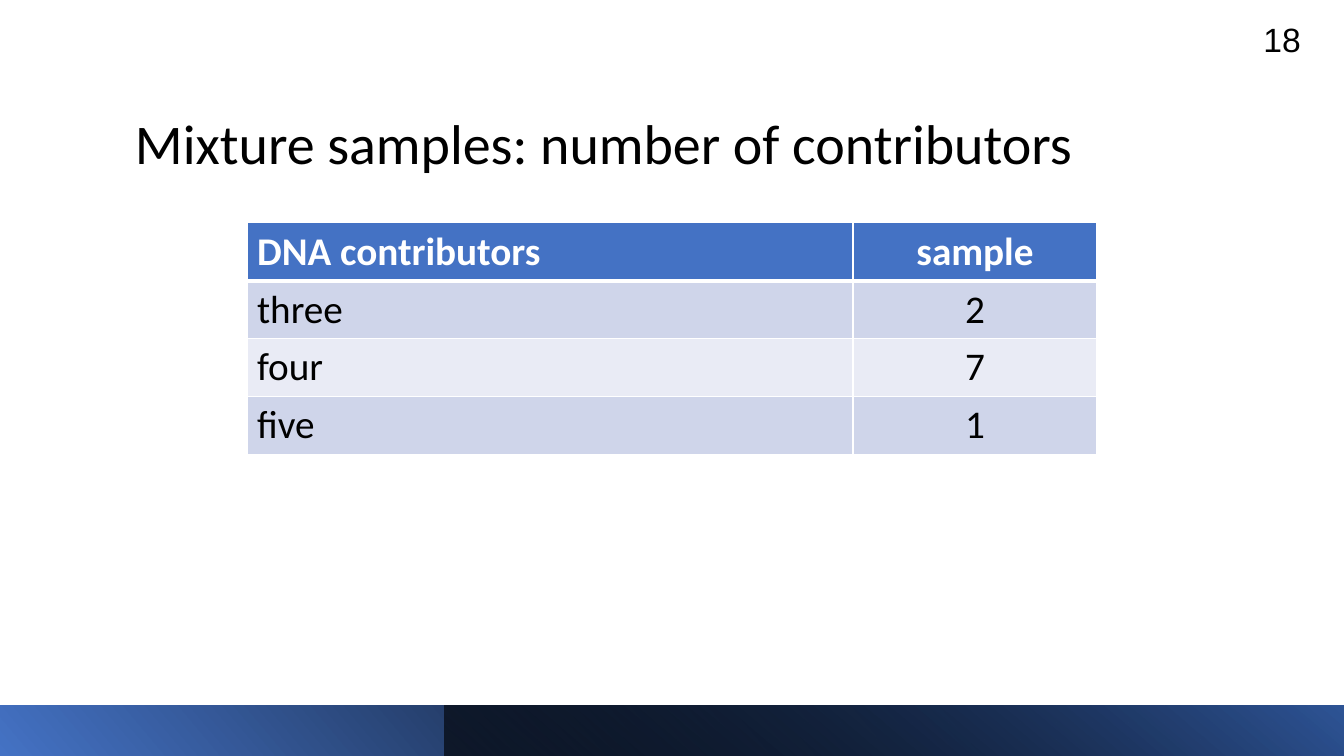
from lxml import etree
from pptx import Presentation
from pptx.dml.color import RGBColor
from pptx.enum import shapes, text
from pptx.oxml import ns
from pptx.util import Inches, Pt

BLACK = RGBColor(0x00, 0x00, 0x00)
WHITE = RGBColor(0xFF, 0xFF, 0xFF)
BLUE = RGBColor(0x44, 0x72, 0xC4)
DEEP_BLUE = RGBColor(0x2F, 0x55, 0x97)
BAND_DARK = RGBColor(0xCF, 0xD5, 0xEA)
BAND_LIGHT = RGBColor(0xE9, 0xEB, 0xF5)

ROWS = [("DNA contributors", "sample"), ("three", "2"), ("four", "7"), ("five", "1")]


def style_paragraph(p, size, color, font="Calibri", align=text.PP_ALIGN.LEFT, bold=False):
    """Format a paragraph and its runs."""
    p.alignment = align
    for r in p.runs:
        r.font.name = font
        r.font.size = Pt(size)
        r.font.bold = bold
        r.font.color.rgb = color


def add_label(s, box, words, size, **style):
    """Add a vertically centred line of text in the box and return its paragraph."""
    tf = s.shapes.add_textbox(*map(Inches, box)).text_frame
    tf.word_wrap = True
    tf.vertical_anchor = text.MSO_ANCHOR.MIDDLE
    p = tf.paragraphs[0]
    p.text = words
    style_paragraph(p, size, BLACK, **style)
    return p


def add_gradient_bar(s, box, stops, angle, rotation=0):
    """Add a mirrored bar with a gradient of (position, colour, opacity) stops."""
    sp = s.shapes.add_shape(shapes.MSO_SHAPE.RECTANGLE, *map(Inches, box))
    sp.shadow.inherit = False
    sp.line.fill.background()
    sp.rotation = rotation
    sp._element.spPr.xfrm.set("flipH", "1")
    sp.fill.gradient()
    sp.fill.gradient_angle = 360 - angle
    for stop, (position, color, opacity) in zip(sp.fill.gradient_stops, stops):
        stop.position = position
        stop.color.rgb = color
        if opacity < 1:
            rgb = stop._gs.find(ns.qn("a:srgbClr"))
            etree.SubElement(rgb, ns.qn("a:alpha"), val=str(round(opacity * 100000)))


def add_footer(s, box):
    """Add the two overlapping gradient bars of the footer."""
    left, top, width, height = box
    third = width / 3 - 0.03
    add_gradient_bar(s, box, [(0, BLUE, 1), (0.78, BLACK, 1)], 40, 180)
    add_gradient_bar(s, (left + third, top, width - third, height),
                     [(0, BLACK, 0.63), (1, DEEP_BLUE, 1)], 230)


def set_borders(cell, bottom):
    """Draw white cell borders, with the given width below."""
    tcPr = cell._tc.get_or_add_tcPr()
    widths = {"lnL": 1, "lnR": 1, "lnT": 1, "lnB": bottom}
    for i, (side, width) in enumerate(widths.items()):
        ln = etree.Element(ns.qn(f"a:{side}"), w=str(Pt(width)))
        fill = etree.SubElement(ln, ns.qn("a:solidFill"))
        etree.SubElement(fill, ns.qn("a:srgbClr"), val=str(WHITE))
        tcPr.insert(i, ln)


def add_contributors_table(s, box):
    """Add the table of sample counts by number of contributors."""
    table = s.shapes.add_table(len(ROWS), 2, *map(Inches, box)).table
    table.columns[0].width = Inches(6.01)
    table.columns[1].width = Inches(box[2] - 6.01)
    for i, row in enumerate(ROWS):
        header = i == 0
        for j, words in enumerate(row):
            cell = table.cell(i, j)
            cell.text = words
            cell.fill.solid()
            cell.fill.fore_color.rgb = BLUE if header else BAND_DARK if i % 2 else BAND_LIGHT
            set_borders(cell, 3 if header else 1)
            style_paragraph(cell.text_frame.paragraphs[0], 28, WHITE if header else BLACK,
                            align=text.PP_ALIGN.CENTER if j else text.PP_ALIGN.LEFT,
                            bold=header)


def main():
    """Build the slide and save it."""
    prs = Presentation()
    prs.slide_width, prs.slide_height = Inches(13.33), Inches(7.5)
    s = prs.slides.add_slide(prs.slide_layouts[6])
    title = add_label(s, (1.24, 0.55, 10.6, 1.8), "Mixture samples: number of contributors", 40)
    title.line_spacing = 0.9
    add_footer(s, (0, 7, 13.33, 0.5))
    add_contributors_table(s, (2.45, 2.21, 8.43, 2.3))
    add_label(s, (12.42, 0.16, 0.58, 0.46), "18", 24, font="Arial", align=text.PP_ALIGN.RIGHT)
    prs.save("out.pptx")


if __name__ == "__main__":
    main()
